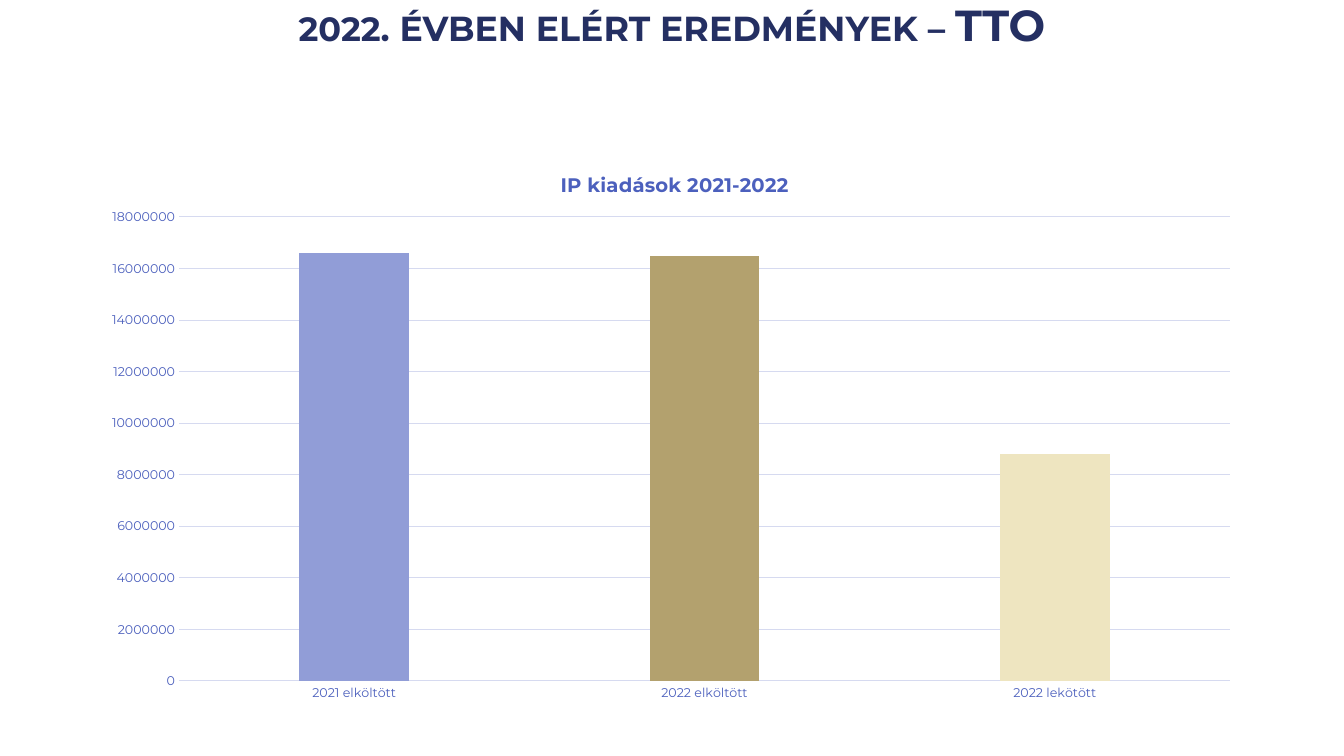
from dataclasses import dataclass

from lxml.etree import SubElement
from pptx import Presentation
from pptx.chart.data import CategoryChartData
from pptx.dml.color import RGBColor
from pptx.enum.chart import XL_CHART_TYPE, XL_TICK_MARK
from pptx.enum.text import MSO_ANCHOR, MSO_AUTO_SIZE, PP_ALIGN
from pptx.oxml.ns import qn
from pptx.util import Pt

EMU_PER_PX = 914400 / 100.8


@dataclass(frozen=True)
class Theme:
    font: str = "Montserrat"
    heading: str = "242F62"
    label: str = "4C60BD"
    grid: str = "D6DAF0"
    blue: str = "919DD7"
    gold: str = "B3A16E"
    cream: str = "EEE5C0"
    heading_size: int = 30
    heading_end_size: int = 31
    chart_title_size: int = 14
    label_size: int = 9


@dataclass(frozen=True)
class Box:
    left: int
    top: int
    width: int
    height: int


@dataclass(frozen=True)
class Spending:
    category: str
    amount: int
    color: str


THEME = Theme()
SLIDE = Box(0, 0, 1344, 756)
HEADING = Box(0, 0, 1344, 54)
CHART = Box(89, 146, 1164, 567)
PLOT = Box(179, 217, 1051, 464)
CHART_TITLE = Box(557, 168, 227, 24)
SPENDINGS = (
    Spending("2021 elköltött", 16600000, THEME.blue),
    Spending("2022 elköltött", 16500000, THEME.gold),
    Spending("2022 lekötött", 8800000, THEME.cream),
)


def px(length: int) -> int:
    return round(length * EMU_PER_PX)


def format_font(font, size: int, color: str, bold: bool = False) -> None:
    font.name = THEME.font
    font.size = Pt(size)
    font.bold = bold
    font.color.rgb = RGBColor.from_string(color)


def add_text(paragraph, text: str, *, size: int, color: str,
             bold: bool = True, small_caps: bool = False) -> None:
    run = paragraph.add_run()
    run.text = text
    format_font(run.font, size, color, bold)
    if small_caps:
        run._r.get_or_add_rPr().set("cap", "small")


def place_in_chart(element, box: Box, position: int, sized: bool) -> None:
    for old_layout in element.findall(qn("c:layout")):
        element.remove(old_layout)
    layout = SubElement(element, qn("c:layout"))
    element.insert(position, layout)
    manual = SubElement(layout, qn("c:manualLayout"))
    settings = {"xMode": "edge", "yMode": "edge",
                "x": (box.left - CHART.left) / CHART.width,
                "y": (box.top - CHART.top) / CHART.height}
    if sized:
        settings = {"layoutTarget": "inner", **settings,
                    "w": box.width / CHART.width,
                    "h": box.height / CHART.height}
    for tag, value in settings.items():
        text = value if isinstance(value, str) else f"{value:.4f}"
        SubElement(manual, qn(f"c:{tag}")).set("val", text)


def draw_heading(slide) -> None:
    heading = slide.shapes.title
    heading.left, heading.top = px(HEADING.left), px(HEADING.top)
    heading.width, heading.height = px(HEADING.width), px(HEADING.height)
    frame = heading.text_frame
    frame.word_wrap = True
    frame.auto_size = MSO_AUTO_SIZE.NONE
    frame.vertical_anchor = MSO_ANCHOR.MIDDLE
    paragraph = frame.paragraphs[0]
    paragraph.alignment = PP_ALIGN.CENTER
    paragraph.line_spacing = 0.9
    for text, size in (("2022", THEME.heading_size),
                       (". évben elért eredmények – TTO", THEME.heading_end_size)):
        add_text(paragraph, text, size=size, color=THEME.heading, small_caps=True)


def format_axis(axis) -> None:
    axis.major_tick_mark = axis.minor_tick_mark = XL_TICK_MARK.NONE
    format_font(axis.tick_labels.font, THEME.label_size, THEME.label)


def format_line(line) -> None:
    line.color.rgb = RGBColor.from_string(THEME.grid)
    line.width = Pt(0.75)


def draw_spending_chart(slide) -> None:
    spending_data = CategoryChartData()
    spending_data.categories = [spending.category for spending in SPENDINGS]
    spending_data.add_series("Series 1", [spending.amount for spending in SPENDINGS])
    chart = slide.shapes.add_chart(
        XL_CHART_TYPE.COLUMN_CLUSTERED, px(CHART.left), px(CHART.top),
        px(CHART.width), px(CHART.height), spending_data).chart
    format_font(chart.font, 10, THEME.heading)
    chart.has_legend = False
    chart.has_title = True
    title = chart.chart_title
    add_text(title.text_frame.paragraphs[0], "IP kiadások 2021-2022",
             size=THEME.chart_title_size, color=THEME.label)
    place_in_chart(title._element, CHART_TITLE, 1, sized=False)
    place_in_chart(chart._chartSpace.chart.plotArea, PLOT, 0, sized=True)

    format_axis(chart.category_axis)
    format_line(chart.category_axis.format.line)
    amounts = chart.value_axis
    format_axis(amounts)
    amounts.format.line.fill.background()
    format_line(amounts.major_gridlines.format.line)
    amounts.minimum_scale = 0
    amounts.maximum_scale = 18000000
    amounts.major_unit = 2000000

    columns = chart.plots[0]
    columns.gap_width = 219
    columns.overlap = -27
    columns.vary_by_categories = False
    series = columns.series[0]
    series.format.fill.solid()
    series.format.fill.fore_color.rgb = RGBColor.from_string(THEME.gold)
    for index, spending in enumerate(SPENDINGS):
        if spending.color != THEME.gold:
            fill = series.points[index].format.fill
            fill.solid()
            fill.fore_color.rgb = RGBColor.from_string(spending.color)


def main() -> None:
    presentation = Presentation()
    presentation.slide_width = px(SLIDE.width)
    presentation.slide_height = px(SLIDE.height)
    slide = presentation.slides.add_slide(presentation.slide_layouts[5])
    draw_heading(slide)
    draw_spending_chart(slide)
    presentation.save("out.pptx")


if __name__ == "__main__":
    main()
